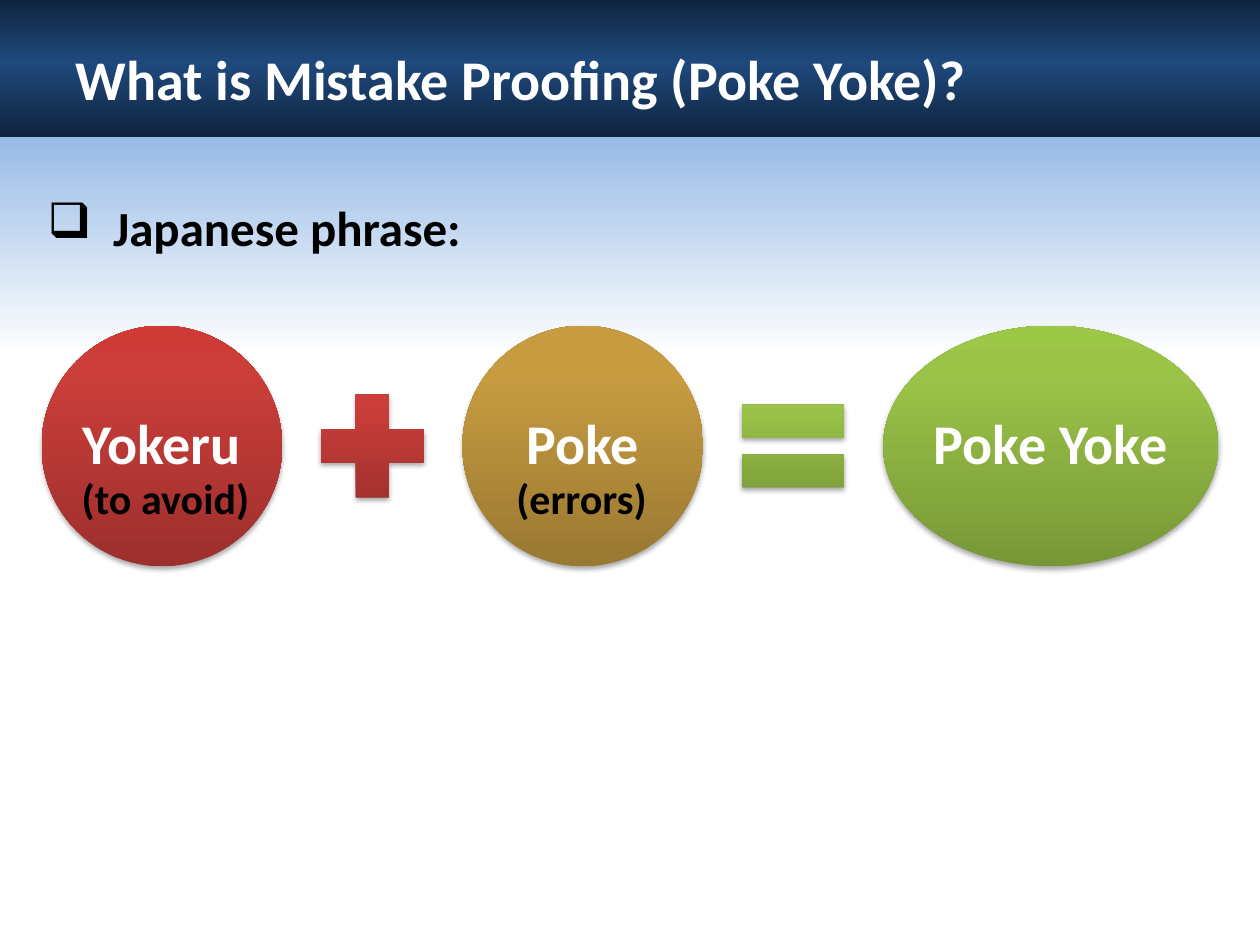
"""Build the slide that explains the phrase Poke Yoke as a word equation."""
from dataclasses import dataclass

from lxml.etree import SubElement
from pptx import Presentation
from pptx.dml.color import RGBColor
from pptx.enum.shapes import MSO_SHAPE
from pptx.enum.text import MSO_ANCHOR, PP_ALIGN
from pptx.oxml import parse_xml
from pptx.oxml.ns import nsdecls, qn
from pptx.util import Inches, Pt


@dataclass(frozen=True)
class Theme:
    font: str = "Calibri"
    white: str = "FFFFFF"
    black: str = "000000"
    sky: tuple = ((0, "8EB4E3"), (29, "FFFFFF"), (100, "FFFFFF"))
    navy: tuple = ((0, "0F243E"), (46, "1F497D"), (100, "0F243E"))
    red: tuple = ((0, "9C2F2D"), (80, "CB3E3A"), (100, "CE3B37"))
    gold: tuple = ((0, "997832"), (80, "C79C41"), (100, "CA9D3F"))
    green: tuple = ((0, "779737"), (80, "9BC348"), (100, "9DC746"))
    heading: int = 32
    phrase: int = 28
    meaning: int = 24


theme = Theme()


def add_gradient_shape(kind, left, top, width, height, stops, angle):
    shape = slide.shapes.add_shape(kind, Inches(left), Inches(top), Inches(width), Inches(height))
    shape.line.fill.background()
    shape.shadow.inherit = False
    shape.fill.gradient()
    gradient = shape._element.spPr.find(qn("a:gradFill"))
    stop_xml = "".join(
        f'<a:gs pos="{position * 1000}"><a:srgbClr val="{color}"/></a:gs>'
        for position, color in stops
    )
    gradient.getparent().replace(gradient, parse_xml(
        f'<a:gradFill {nsdecls("a")} rotWithShape="1"><a:gsLst>{stop_xml}</a:gsLst>'
        f'<a:lin ang="{angle * 60000}" scaled="0"/></a:gradFill>'
    ))
    return shape


def write_text(shape, text, size, color):
    frame = shape.text_frame
    frame.text = text
    frame.word_wrap = True
    paragraph = frame.paragraphs[0]
    font = paragraph.font
    font.name, font.size, font.bold = theme.font, Pt(size), True
    font.color.rgb = RGBColor.from_string(color)
    return paragraph


deck = Presentation()
deck.slide_width, deck.slide_height = Inches(10), Inches(7.5)
slide = deck.slides.add_slide(deck.slide_layouts[5])

add_gradient_shape(MSO_SHAPE.RECTANGLE, -0.01, 0.92, 10.03, 6.54, theme.sky, 90)
add_gradient_shape(MSO_SHAPE.RECTANGLE, -0.03, -0.01, 10.04, 1.1, theme.navy, 90)

title = slide.shapes.title
title.left, title.top, title.width, title.height = Inches(0.5), Inches(0.3), Inches(9), Inches(0.64)
heading = write_text(title, "What is Mistake Proofing (Poke Yoke)?", theme.heading, theme.white)
heading.alignment = PP_ALIGN.LEFT
title.text_frame.vertical_anchor = MSO_ANCHOR.TOP
slide.shapes._spTree.append(title._element)

phrase_box = slide.shapes.add_textbox(Inches(0.28), Inches(1.52), Inches(9.2), Inches(1.23))
phrase = write_text(phrase_box, "Japanese phrase:", theme.phrase, theme.black)
properties = phrase._p.get_or_add_pPr()
properties.set("marL", str(Inches(0.52)))
properties.set("indent", str(-Inches(0.52)))
bullet = SubElement(properties, qn("a:buChar"))
bullet.set("char", "❑")
properties.insert(0, bullet)

terms = [
    (MSO_SHAPE.OVAL, 1.91, 1.91, theme.red, "Yokeru"),
    (MSO_SHAPE.MATH_PLUS, 1.11, 1.11, theme.red, ""),
    (MSO_SHAPE.OVAL, 1.91, 1.91, theme.gold, "Poke"),
    (MSO_SHAPE.MATH_EQUAL, 1.11, 1.11, theme.green, ""),
    (MSO_SHAPE.OVAL, 2.66, 1.91, theme.green, "Poke Yoke"),
]
left, middle, gap = 0.33, 3.54, 0.16
for kind, width, height, stops, word in terms:
    term = add_gradient_shape(kind, left, middle - height / 2, width, height, stops, 270)
    effects = term._element.spPr.find(qn("a:effectLst"))
    effects.append(parse_xml(
        f'<a:outerShdw {nsdecls("a")} blurRad="{Pt(3.1)}" dist="{Pt(1.8)}" dir="5400000" '
        f'rotWithShape="0"><a:srgbClr val="{theme.black}"><a:alpha val="35000"/></a:srgbClr>'
        '</a:outerShdw>'
    ))
    if word:
        paragraph = write_text(term, word, theme.heading, theme.white)
        paragraph.alignment = PP_ALIGN.CENTER
        paragraph.line_spacing = 0.9
        frame = term.text_frame
        frame.word_wrap = False
        frame.vertical_anchor = MSO_ANCHOR.MIDDLE
        frame.margin_left = frame.margin_right = frame.margin_top = frame.margin_bottom = 0
    left += width + gap

for left, width, meaning in [(0.55, 1.62, "(to avoid)"), (4, 1.3, "(errors)")]:
    box = slide.shapes.add_textbox(Inches(left), Inches(3.7), Inches(width), Inches(0.5))
    write_text(box, meaning, theme.meaning, theme.black)

deck.save("out.pptx")
